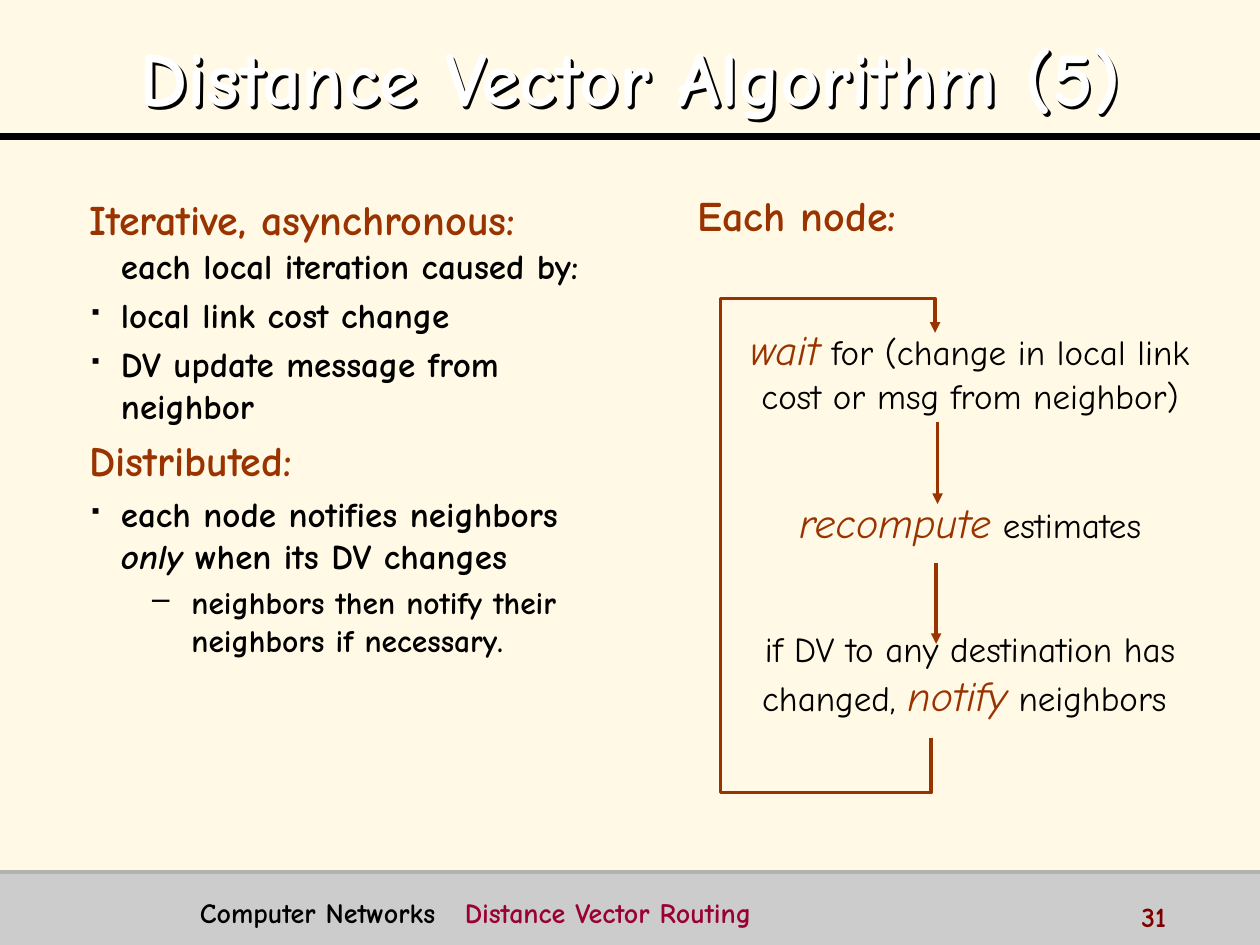
from lxml import etree
from pptx import Presentation
from pptx.dml.color import RGBColor
from pptx.enum.shapes import MSO_CONNECTOR, MSO_SHAPE
from pptx.enum.text import MSO_ANCHOR, PP_ALIGN
from pptx.oxml.ns import qn
from pptx.util import Cm, Pt

STRAIGHT = MSO_CONNECTOR.STRAIGHT
RECTANGLE = MSO_SHAPE.RECTANGLE
LEFT, CENTER = PP_ALIGN.LEFT, PP_ALIGN.CENTER
TOP, MIDDLE = MSO_ANCHOR.TOP, MSO_ANCHOR.MIDDLE

FONT = "Comic Neue"
BLACK, WHITE, RUST, CRIMSON, MAROON = "000000", "FFFFFF", "993300", "990033", "800000"
CREAM, GRAY, MID_GRAY = "FFF9E6", "CCCCCC", "B2B2B2"
SLIDE_WIDTH, SLIDE_HEIGHT = 25.4, 19.05
FOOTER_TOP = 17.58


def color(hex_string):
    return RGBColor.from_string(hex_string)


def add_element(parent, tag, **attributes):
    return etree.SubElement(parent, qn(tag), attributes)


def add_run(paragraph, text, size, hex_color=BLACK, bold=False, italic=False):
    run = paragraph.add_run()
    run.text = text
    run.font.name = FONT
    run.font.size = Pt(size)
    run.font.bold = bold
    run.font.italic = italic
    run.font.color.rgb = color(hex_color)


def add_text_box(slide, left, top, width, height, anchor=TOP):
    shape = slide.shapes.add_textbox(Cm(left), Cm(top), Cm(width), Cm(height))
    shape.text_frame.word_wrap = True
    shape.text_frame.vertical_anchor = anchor
    return shape


def add_text(slide, box, runs, alignment=LEFT, anchor=TOP):
    shape = add_text_box(slide, *box, anchor)
    paragraph = shape.text_frame.paragraphs[0]
    paragraph.alignment = alignment
    for run in runs:
        add_run(paragraph, *run)
    return shape


def set_indent(paragraph, margin, hanging, bullet=None, bullet_percent=100):
    properties = paragraph._p.get_or_add_pPr()
    properties.set("marL", str(Cm(margin)))
    properties.set("indent", str(-Cm(hanging)))
    if bullet:
        bullet_color = add_element(properties, "a:buClr")
        add_element(bullet_color, "a:srgbClr", val=BLACK)
        add_element(properties, "a:buSzPct", val=str(bullet_percent * 1000))
        add_element(properties, "a:buChar", char=bullet)
    else:
        add_element(properties, "a:buNone")


def add_shadow(shape, hex_color, distance):
    """An unfilled box casts the shadow of its text."""
    effects = add_element(shape._element.spPr, "a:effectLst")
    shadow = add_element(effects, "a:outerShdw", blurRad="0", dist=str(Cm(distance)),
                         dir="2700000", algn="tl", rotWithShape="0")
    add_element(shadow, "a:srgbClr", val=hex_color)


def style_line(shape, hex_color, width, arrow=False):
    shape.line.color.rgb = color(hex_color)
    shape.line.width = Pt(width)
    if arrow:
        add_element(shape.line._get_or_add_ln(), "a:tailEnd", type="triangle")


def add_line(slide, start, end, hex_color, width, arrow=False):
    connector = slide.shapes.add_connector(STRAIGHT, *map(Cm, start + end))
    style_line(connector, hex_color, width, arrow)
    add_element(connector._element.spPr, "a:effectLst")


def add_loop(slide, points):
    start, *others = [(Cm(x), Cm(y)) for x, y in points]
    builder = slide.shapes.build_freeform(*start)
    builder.add_line_segments(others, close=False)
    loop = builder.convert_to_shape()
    loop.fill.background()
    loop.shadow.inherit = False
    style_line(loop, RUST, 2, arrow=True)


def add_footer(slide):
    band = slide.shapes.add_shape(RECTANGLE, 0, Cm(FOOTER_TOP), Cm(SLIDE_WIDTH),
                                  Cm(SLIDE_HEIGHT - FOOTER_TOP))
    band.fill.solid()
    band.fill.fore_color.rgb = color(GRAY)
    band.line.fill.background()
    band.shadow.inherit = False
    add_line(slide, (0, FOOTER_TOP), (SLIDE_WIDTH, FOOTER_TOP), MID_GRAY, 2)

    # Course name and topic, set apart by a tab stop
    footer = add_text(slide, (3.78, 17.93, 18.29, 0.79),
                      [("Computer Networks\t", 16, BLACK, True),
                       ("Distance Vector Routing", 16, CRIMSON, True)])
    paragraph = footer.text_frame.paragraphs[0]
    tabs = add_element(paragraph._p.get_or_add_pPr(), "a:tabLst")
    add_element(tabs, "a:tab", pos=str(Cm(5.34)), algn="l")
    add_text(slide, (22.76, 18.01, 2.54, 0.64), [("31", 16, MAROON, True)])


def add_outline(slide):
    plain, square, dash = (0.64, 0.64), (0.64, 0.64, "▪", 50), (2.06, 0.79, "–")
    # Level, space before, indent, runs
    items = [
        (0, 0, plain, [("Iterative, asynchronous: ", 24, RUST, True),
                       ("each local iteration caused by:", 20, BLACK, True)]),
        (0, 4, square, [("local link cost change", 20, BLACK, True)]),
        (0, 4, square, [("DV update message from neighbor", 20, BLACK, True)]),
        (0, 5, plain, [("Distributed:", 24, RUST, True)]),
        (0, 4, square, [("each node notifies neighbors ", 20, BLACK, True),
                        ("only", 20, BLACK, True, True),
                        (" when its DV changes", 20, BLACK, True)]),
        (1, 4, dash, [("neighbors then notify their neighbors if necessary.", 18, BLACK, True)]),
    ]
    frame = add_text_box(slide, 1.55, 3.78, 10.52, 12.9).text_frame
    for index, (level, space, indent, runs) in enumerate(items):
        paragraph = frame.add_paragraph() if index else frame.paragraphs[0]
        set_indent(paragraph, *indent)
        paragraph.level = level
        if space:
            paragraph.space_before = Pt(space)
        for run in runs:
            add_run(paragraph, *run)


def add_node_cycle(slide):
    add_text(slide, (12.5, 3.7, 7.14, 1.27), [("Each node:", 24, RUST, True)], CENTER)

    # Steps of the cycle
    steps = [
        (6.4, 2.2, [("wait", 24, RUST, False, True),
                    (" for (change in local link cost or msg from neighbor)", 20)]),
        (9.88, 1.3, [("recompute", 24, RUST, False, True), (" estimates", 20)]),
        (12.52, 2.2, [("if DV to any destination has changed, ", 20),
                      ("notify", 24, RUST, False, True), (" neighbors ", 20)]),
    ]
    for top, height, runs in steps:
        add_text(slide, (14.3, top, 10.52, height), runs, CENTER)

    # Arrows down and the loop back to the first step
    add_line(slide, (18.9, 8.51), (18.9, 10.16), RUST, 2, arrow=True)
    add_line(slide, (18.87, 11.35), (18.87, 12.98), RUST, 2, arrow=True)
    add_loop(slide, [(18.77, 14.88), (18.77, 15.98), (14.53, 15.98),
                     (14.53, 6.02), (18.85, 6.02), (18.85, 6.71)])


def add_title(slide):
    add_line(slide, (0, 2.75), (SLIDE_WIDTH, 2.75), BLACK, 4)
    title = add_text(slide, (0.51, 0.33, 24.41, 2.21),
                     [("Distance Vector Algorithm (5)", 44, WHITE, True)], CENTER, MIDDLE)
    title.text_frame.paragraphs[0].line_spacing = 1.1
    add_shadow(title, BLACK, 0.08)


def main():
    presentation = Presentation()
    presentation.slide_width = Cm(SLIDE_WIDTH)
    presentation.slide_height = Cm(SLIDE_HEIGHT)
    slide = presentation.slides.add_slide(presentation.slide_layouts[6])
    slide.background.fill.solid()
    slide.background.fill.fore_color.rgb = color(CREAM)
    add_footer(slide)
    add_outline(slide)
    add_node_cycle(slide)
    add_title(slide)
    presentation.save("out.pptx")


if __name__ == "__main__":
    main()
